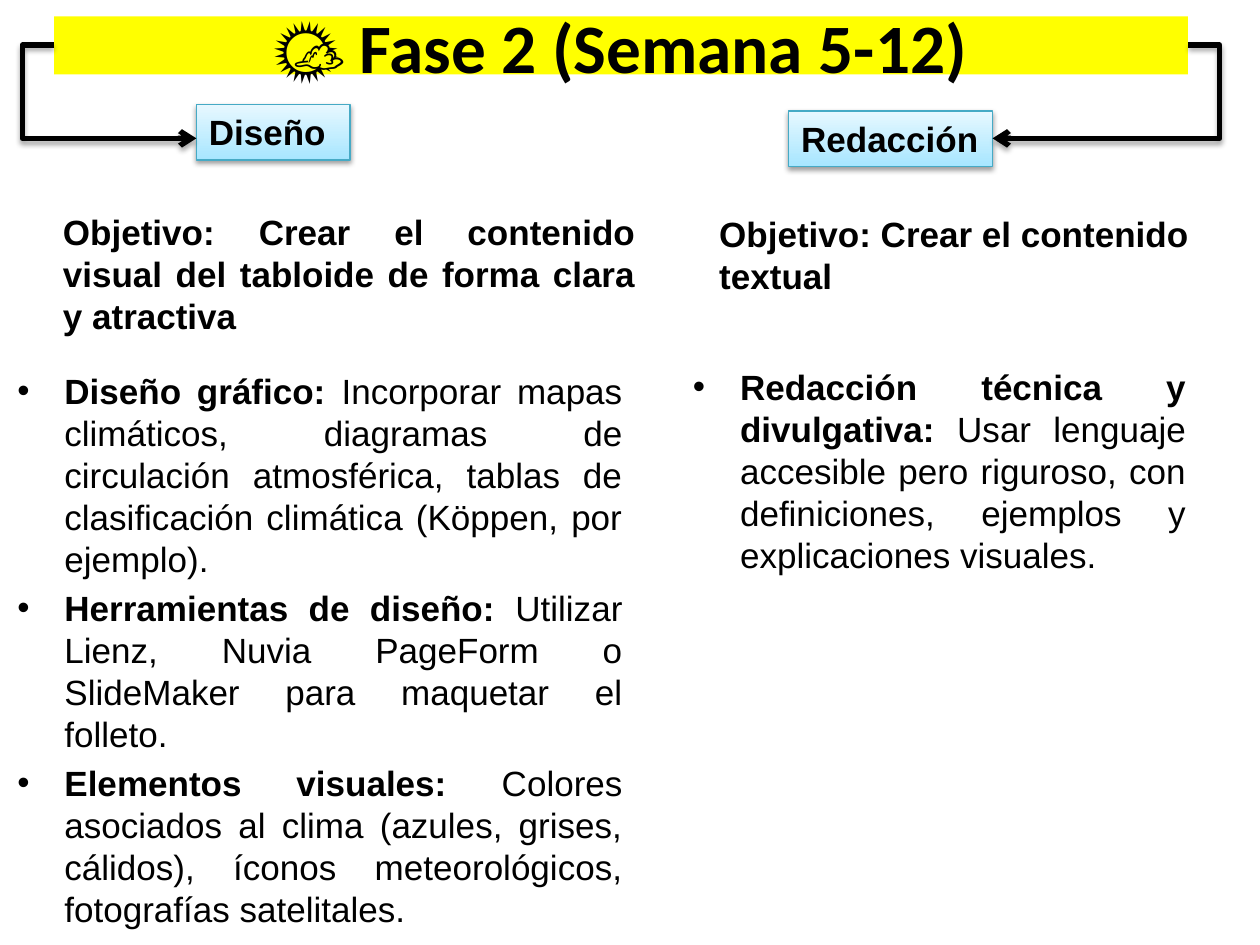
import pptx
import pptx.util
import pptx.dml.color
import pptx.enum.shapes
import pptx.enum.text
import pptx.oxml
import pptx.oxml.ns

Cm = pptx.util.Cm
Pt = pptx.util.Pt
ALIGN = pptx.enum.text.PP_ALIGN
ANCHOR = pptx.enum.text.MSO_ANCHOR
COLORS = {
    "ink": "000000",
    "banner": "FFFF00",
    "label_low": "A7E6FF",
    "label_high": "E7F8FF",
    "label_edge": "46AAC5",
}
DESIGN_TASKS = [
    ("Diseño gráfico:", " Incorporar mapas climáticos, diagramas de circulación atmosférica, "
     "tablas de clasificación climática (Köppen, por ejemplo)."),
    ("Herramientas de diseño:", " Utilizar Lienz, Nuvia PageForm o SlideMaker para maquetar el folleto."),
    ("Elementos visuales:", " Colores asociados al clima (azules, grises, cálidos), "
     "íconos meteorológicos, fotografías satelitales."),
]
WRITING_TASKS = [
    ("Redacción técnica y divulgativa:", " Usar lenguaje accesible pero riguroso, "
     "con definiciones, ejemplos y explicaciones visuales."),
]


def rgb(name):
    return pptx.dml.color.RGBColor.from_string(COLORS[name])


def write_span(para, text, size=20, font="Arial", bold=True, color="ink"):
    span = para.add_run()
    span.text = text
    span.font.size = Pt(size)
    span.font.name = font
    span.font.bold = bold
    span.font.color.rgb = rgb(color)


def add_shadow(item, opacity, offset):
    effects = pptx.oxml.parse_xml(
        f'<a:effectLst {pptx.oxml.ns.nsdecls("a")}>'
        f'<a:outerShdw blurRad="{Pt(3.1)}" dist="{Pt(offset)}" dir="5400000" rotWithShape="0">'
        f'<a:srgbClr val="{COLORS["ink"]}"><a:alpha val="{opacity * 1000}"/></a:srgbClr>'
        '</a:outerShdw></a:effectLst>')
    item._element.spPr.append(effects)


class PhaseSlide:
    """Holds the page and draws its elements in one style."""

    line_height = Pt(24)
    para_gap = Pt(4)
    indent = Cm(0.95)

    def __init__(self, deck):
        self.page = deck.slides.add_slide(deck.slide_layouts[6])

    def rectangle(self, left, top, width, height):
        return self.page.shapes.add_shape(
            pptx.enum.shapes.MSO_SHAPE.RECTANGLE, Cm(left), Cm(top), Cm(width), Cm(height))

    def text_box(self, left, top, width, height, anchor):
        box = self.page.shapes.add_textbox(Cm(left), Cm(top), Cm(width), Cm(height))
        box.text_frame.word_wrap = True
        box.text_frame.vertical_anchor = anchor
        return box

    def banner(self, text, *place):
        box = self.rectangle(*place)
        box.shadow.inherit = False
        box.fill.solid()
        box.fill.fore_color.rgb = rgb("banner")
        box.line.fill.background()
        box.text_frame.vertical_anchor = ANCHOR.MIDDLE
        para = box.text_frame.paragraphs[0]
        para.alignment = ALIGN.CENTER
        write_span(para, text, size=39.6, font="Calibri")

    def label(self, text, *place):
        box = self.rectangle(*place)
        box.fill.gradient()
        box.fill.gradient_angle = 90
        for stop, name in zip(box.fill.gradient_stops, ("label_low", "label_high")):
            stop.color.rgb = rgb(name)
        box.line.color.rgb = rgb("label_edge")
        box.line.width = Pt(0.75)
        add_shadow(box, 38, 1.6)
        box.text_frame.word_wrap = False
        box.text_frame.vertical_anchor = ANCHOR.TOP
        para = box.text_frame.paragraphs[0]
        para.alignment = ALIGN.LEFT
        write_span(para, text)

    def objective(self, text, *place, align=ALIGN.LEFT):
        para = self.text_box(*place, ANCHOR.BOTTOM).text_frame.paragraphs[0]
        para.alignment = align
        para.line_spacing = self.line_height
        write_span(para, text)

    def bullets(self, tasks, *place):
        frame = self.text_box(*place, ANCHOR.TOP).text_frame
        for index, (heading, detail) in enumerate(tasks):
            para = frame.add_paragraph() if index else frame.paragraphs[0]
            para.alignment = ALIGN.JUSTIFY
            para.line_spacing = self.line_height
            para.space_before = self.para_gap
            props = para._p.get_or_add_pPr()
            props.set("marL", str(self.indent))
            props.set("indent", str(-self.indent))
            for tag in ('buFont typeface="Arial"', 'buChar char="•"'):
                props.append(pptx.oxml.parse_xml(f'<a:{tag} {pptx.oxml.ns.nsdecls("a")}/>'))
            write_span(para, heading)
            write_span(para, detail, bold=False)

    def elbow_arrow(self, start_x, start_y, end_x, end_y, overhang=0.64):
        arrow = self.page.shapes.add_connector(
            pptx.enum.shapes.MSO_CONNECTOR.ELBOW, Cm(start_x), Cm(start_y), Cm(end_x), Cm(end_y))
        arrow.line.color.rgb = rgb("ink")
        arrow.line.width = Pt(3)
        bend = round(-100000 * overhang / abs(end_x - start_x))
        namespace = pptx.oxml.ns.nsdecls("a")
        guides = arrow._element.spPr.find(".//" + pptx.oxml.ns.qn("a:avLst"))
        guides.append(pptx.oxml.parse_xml(f'<a:gd {namespace} name="adj1" fmla="val {bend}"/>'))
        arrow.line._get_or_add_ln().append(
            pptx.oxml.parse_xml(f'<a:tailEnd {namespace} type="arrow"/>'))
        add_shadow(arrow, 35, 1.8)


def main():
    deck = pptx.Presentation()
    deck.slide_width, deck.slide_height = Cm(25.4), Cm(19.05)
    slide = PhaseSlide(deck)
    slide.banner("🌤 Fase 2 (Semana 5-12)", 1.09, 0.33, 22.86, 1.17)
    slide.objective("Objetivo: Crear el contenido visual del tabloide de forma clara y atractiva",
                    1.02, 5.13, 12.04, 1.78, align=ALIGN.JUSTIFY)
    slide.objective("Objetivo: Crear el contenido textual", 14.25, 4.32, 11.15, 1.78)
    slide.bullets(WRITING_TASKS, 13.72, 7.24, 10.44, 10.97)
    slide.label("Diseño", 3.96, 2.11, 3.1, 1.12)
    slide.label("Redacción", 15.9, 2.24, 4.11, 1.12)
    slide.elbow_arrow(1.09, 0.91, 3.96, 2.79)
    slide.elbow_arrow(23.95, 0.91, 20.01, 2.79)
    slide.bullets(DESIGN_TASKS, 0.1, 7.32, 12.7, 11.71)
    deck.save("out.pptx")


if __name__ == "__main__":
    main()
